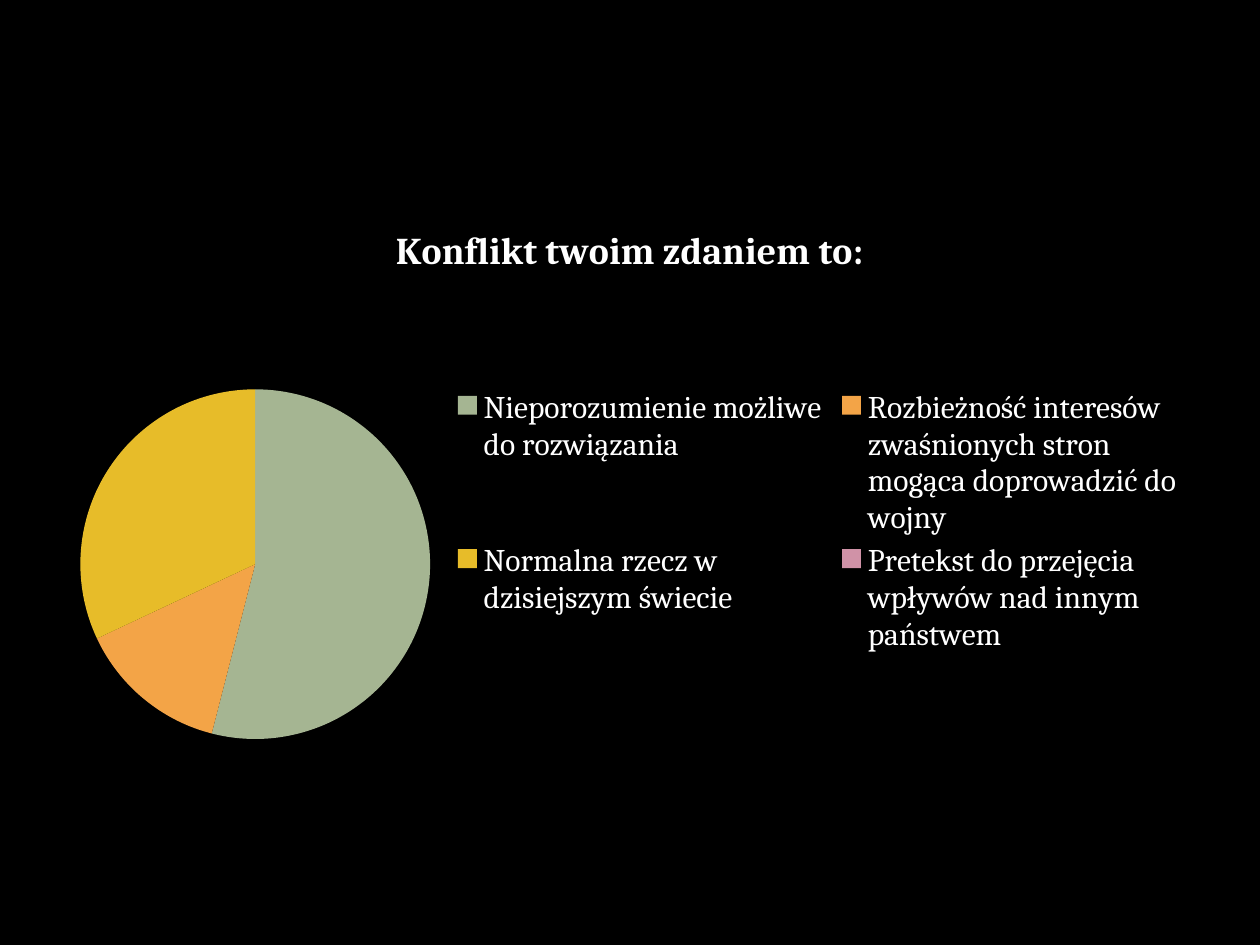
from dataclasses import dataclass

from pptx import Presentation
from pptx.chart.data import CategoryChartData
from pptx.dml.color import RGBColor
from pptx.enum.chart import XL_CHART_TYPE, XL_LEGEND_POSITION
from pptx.util import Cm, Pt


@dataclass(frozen=True)
class Theme:
    font: str = "Cambria"
    background: str = "000000"
    text: str = "FFFFFF"
    slices: tuple = ("A5B592", "F3A447", "E7BC29", "D092A7")
    title_size: float = 21.6
    legend_size: float = 18


def style_font(font, size, bold):
    font.name = theme.font
    font.size = Pt(size)
    font.bold = bold
    font.color.rgb = RGBColor.from_string(theme.text)


theme = Theme()
question = "Konflikt twoim zdaniem to:"
answers = {
    "Nieporozumienie możliwe do rozwiązania": 54,
    "Rozbieżność interesów zwaśnionych stron mogąca doprowadzić do wojny": 14,
    "Normalna rzecz w dzisiejszym świecie": 32,
    "Pretekst do przejęcia wpływów nad innym państwem": 0,
}

presentation = Presentation()
presentation.slide_width = Cm(25.4)
presentation.slide_height = Cm(19.05)
slide = presentation.slides.add_slide(presentation.slide_layouts[6])
slide.background.fill.solid()
slide.background.fill.fore_color.rgb = RGBColor.from_string(theme.background)

chart_data = CategoryChartData()
chart_data.categories = list(answers)
chart_data.add_series(question, list(answers.values()))
chart = slide.shapes.add_chart(
    XL_CHART_TYPE.PIE, Cm(1.27), Cm(4.01), Cm(22.86), Cm(13), chart_data
).chart
style_font(chart.font, theme.legend_size, False)

chart.has_title = True
title_run = chart.chart_title.text_frame.paragraphs[0].add_run()
title_run.text = question
style_font(title_run.font, theme.title_size, True)
chart.chart_title.include_in_layout = False

plot = chart.plots[0]
plot.vary_by_categories = True
for index, color in enumerate(theme.slices):
    point = plot.series[0].points[index]
    point.format.fill.solid()
    point.format.fill.fore_color.rgb = RGBColor.from_string(color)
    point.format.line.fill.background()

chart.has_legend = True
chart.legend.position = XL_LEGEND_POSITION.RIGHT
chart.legend.include_in_layout = False
style_font(chart.legend.font, theme.legend_size, False)

presentation.save("out.pptx")
